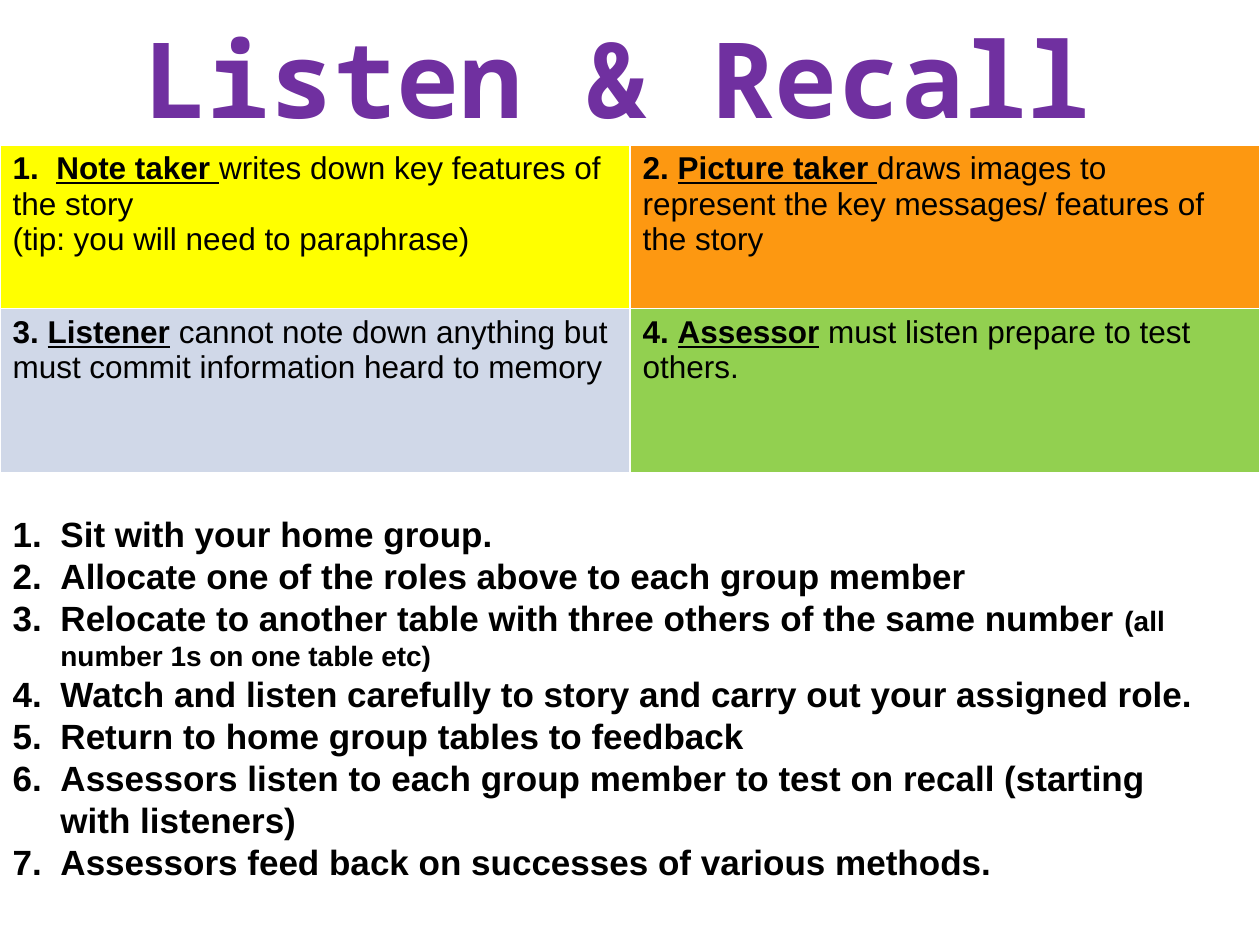
from dataclasses import dataclass

from lxml import etree
from pptx import Presentation
from pptx.dml import color
from pptx.enum import text
from pptx.oxml import ns
from pptx.util import Inches, Pt

COLOURS = {
    "title": "7030A0",
    "text": "000000",
    "border": "FFFFFF",
    "yellow": "FFFF00",
    "orange": "FD9811",
    "grey": "D0D8E8",
    "green": "92D050",
}


@dataclass
class Role:
    number: str
    name: str
    duty: str
    fill: str
    tip: str = ""


ROLES = [
    Role("1.  ", "Note taker ", "writes down key features of the story", "yellow",
         "(tip: you will need to paraphrase)"),
    Role("2. ", "Picture taker ",
         "draws images to represent the key messages/ features of the story", "orange"),
    Role("3. ", "Listener",
         " cannot note down anything but must commit information heard to memory", "grey"),
    Role("4. ", "Assessor", " must listen prepare to test others.", "green"),
]

# Each step is its main wording and an optional smaller remark
STEPS = [
    ("Sit with your home group.", ""),
    ("Allocate one of the roles above to each group member", ""),
    ("Relocate to another table with three others of the same number ",
     "(all number 1s on one table etc)"),
    ("Watch and listen carefully to story and carry out your assigned role.", ""),
    ("Return to home group tables to feedback", ""),
    ("Assessors listen to each group member to test on recall (starting with listeners)", ""),
    ("Assessors feed back on successes of various methods.", ""),
]


def rgb(name: str) -> color.RGBColor:
    return color.RGBColor.from_string(COLOURS[name])


def add_span(para, wording: str, size: float, colour: str = "text", **formats) -> None:
    span = para.add_run()
    span.text = wording
    values = {"name": "Arial", "size": Pt(size), "bold": False, **formats}
    for attribute, value in values.items():
        setattr(span.font, attribute, value)
    span.font.color.rgb = rgb(colour)


def place(shape, left: float, top: float, width: float, height: float) -> None:
    shape.left, shape.top = Inches(left), Inches(top)
    shape.width, shape.height = Inches(width), Inches(height)


def set_frame(frame, anchor) -> None:
    formats = {"word_wrap": True, "auto_size": text.MSO_AUTO_SIZE.NONE,
               "vertical_anchor": anchor}
    for attribute, value in formats.items():
        setattr(frame, attribute, value)


def number_paragraph(para) -> None:
    properties = para._p.get_or_add_pPr()
    properties.set("marL", str(Inches(0.38)))
    properties.set("indent", str(-Inches(0.38)))
    etree.SubElement(properties, ns.qn("a:buFont"), typeface="+mj-lt")
    etree.SubElement(properties, ns.qn("a:buAutoNum"), type="arabicPeriod")
    para.space_before = Pt(0)


def fill_role(cell, role: Role) -> None:
    cell.fill.solid()
    cell.fill.fore_color.rgb = rgb(role.fill)
    para = cell.text_frame.paragraphs[0]
    add_span(para, role.number, 18, bold=True)
    add_span(para, role.name, 18, bold=True, underline=True)
    add_span(para, role.duty, 18)
    if role.tip:
        add_span(cell.text_frame.add_paragraph(), role.tip, 18)


def main() -> None:
    deck = Presentation()
    deck.slide_width, deck.slide_height = Inches(10), Inches(7.5)
    page = deck.slides.add_slide(deck.slide_layouts[1])
    title, steps_box = page.placeholders

    # Numbered steps
    place(steps_box, 0, 4.02, 9.8, 3.06)
    steps_box.line.color.rgb = rgb("border")
    steps_box.line.width = Pt(6)
    frame = steps_box.text_frame
    set_frame(frame, text.MSO_ANCHOR.TOP)
    for index, (wording, remark) in enumerate(STEPS):
        para = frame.add_paragraph() if index else frame.paragraphs[0]
        number_paragraph(para)
        add_span(para, wording, 20, bold=True)
        if remark:
            add_span(para, remark, 16, bold=True)

    # Title
    place(title, 0.4, 0.19, 9, 0.84)
    set_frame(title.text_frame, text.MSO_ANCHOR.MIDDLE)
    heading = title.text_frame.paragraphs[0]
    heading.alignment = text.PP_ALIGN.CENTER
    add_span(heading, "Listen & Recall", 60, "title", name="Noto Sans Mono", bold=True)

    # Role table, with the white rules of its default style
    table = page.shapes.add_table(2, 2, Inches(0), Inches(1.15), Inches(10), Inches(2.6)).table
    table.horz_banding = False
    for cell, role in zip(table.iter_cells(), ROLES):
        fill_role(cell, role)

    deck.save("out.pptx")


if __name__ == "__main__":
    main()
